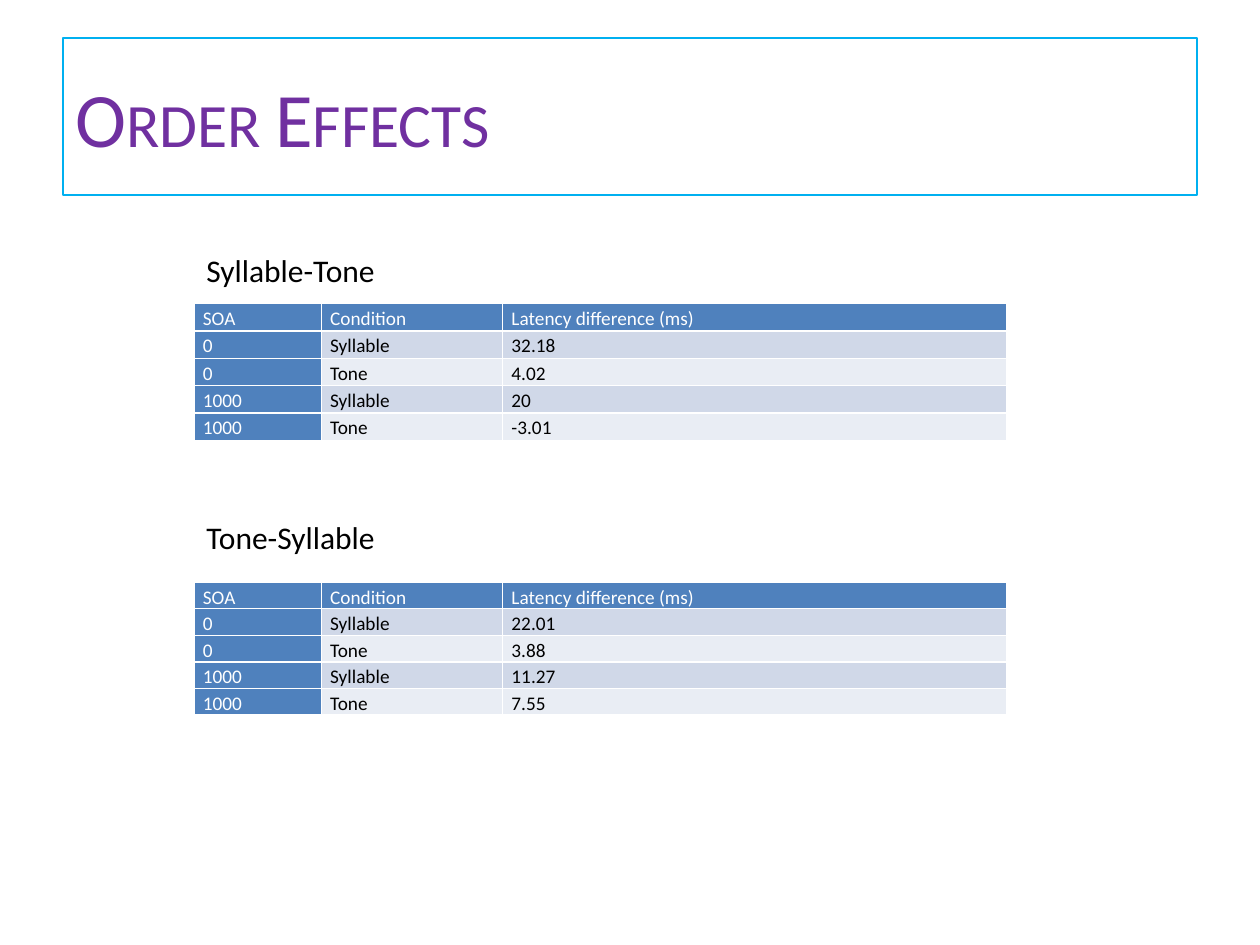
from pptx import Presentation
from pptx.dml.color import RGBColor
from pptx.enum import text
from pptx.oxml import parse_xml
from pptx.oxml.ns import nsdecls
from pptx.util import Inches, Pt

PURPLE, CYAN, BLUE = "7030A0", "00B0F0", "4F81BD"
BLACK, WHITE = "000000", "FFFFFF"
BANDS = ("D0D8E8", "E9EDF4")
HEADINGS = ("SOA", "Condition", "Latency difference (ms)")
TRIALS = (("0", "Syllable"), ("0", "Tone"), ("1000", "Syllable"), ("1000", "Tone"))
COLUMN_WIDTHS = (1.01, 1.44, 4)


def color(value):
    return RGBColor.from_string(value)


def write(frame, wording, size, ink):
    """Put one run of text in a frame and return the run."""
    paragraph = frame.paragraphs[0]
    paragraph.alignment = text.PP_ALIGN.LEFT
    run = paragraph.add_run()
    run.text = wording
    run.font.color.rgb = color(ink)
    for name, value in {"name": "Calibri", "size": Pt(size), "bold": False}.items():
        setattr(run.font, name, value)
    return run


def add_borders(cell):
    properties = cell._tc.get_or_add_tcPr()
    for position, side in enumerate(("lnL", "lnR", "lnT", "lnB")):
        properties.insert(position, parse_xml(
            f'<a:{side} {nsdecls("a")} w="{Pt(1)}"><a:solidFill>'
            f'<a:srgbClr val="{WHITE}"/></a:solidFill></a:{side}>'))


def format_title(title, left, top, width, height):
    box = {"left": left, "top": top, "width": width, "height": height}
    for name, value in box.items():
        setattr(title, name, Inches(value))
    title.line.color.rgb = color(CYAN)
    title.line.width = Pt(1)
    title.text_frame.vertical_anchor = text.MSO_ANCHOR.MIDDLE
    run = write(title.text_frame, "Order Effects", 44, PURPLE)
    run.font._element.set("cap", "small")


def add_label(slide, wording, left, top):
    label = slide.shapes.add_textbox(
        Inches(left), Inches(top), Inches(3.07), Inches(0.4))
    label.text_frame.word_wrap = True
    label.text_frame.auto_size = text.MSO_AUTO_SIZE.SHAPE_TO_FIT_TEXT
    write(label.text_frame, wording, 18, BLACK)


def add_latency_table(slide, latencies, left, top, height):
    rows = [HEADINGS] + [(*trial, latency) for trial, latency in zip(TRIALS, latencies)]
    table = slide.shapes.add_table(
        len(rows), len(HEADINGS), Inches(left), Inches(top),
        Inches(sum(COLUMN_WIDTHS)), Inches(height)).table
    for column, width in zip(table.columns, COLUMN_WIDTHS):
        column.width = Inches(width)
    margins = {"margin_left": 0.07, "margin_right": 0.07,
               "margin_top": 0, "margin_bottom": 0}
    for r, row in enumerate(rows):
        for c, wording in enumerate(row):
            cell = table.cell(r, c)
            is_heading = r == 0 or c == 0
            for name, value in margins.items():
                setattr(cell, name, Inches(value))
            cell.fill.solid()
            cell.fill.fore_color.rgb = color(BLUE if is_heading else BANDS[(r - 1) % 2])
            write(cell.text_frame, wording, 11, WHITE if is_heading else BLACK)
            cell.text_frame.paragraphs[0].line_spacing = 1.15
            add_borders(cell)


def main():
    deck = Presentation()
    deck.slide_width, deck.slide_height = Inches(10), Inches(7.5)
    slide = deck.slides.add_slide(deck.slide_layouts[5])
    format_title(slide.shapes.title, 0.5, 0.3, 9, 1.25)
    orders = (
        ("Syllable-Tone", 1.94, 2.41, 1.08, ("32.18", "4.02", "20", "-3.01")),
        ("Tone-Syllable", 4.06, 4.62, 1.05, ("22.01", "3.88", "11.27", "7.55")),
    )
    left = 1.54
    for order, label_top, table_top, height, latencies in orders:
        add_latency_table(slide, latencies, left, table_top, height)
        add_label(slide, order, left, label_top)
    deck.save("out.pptx")


if __name__ == "__main__":
    main()
